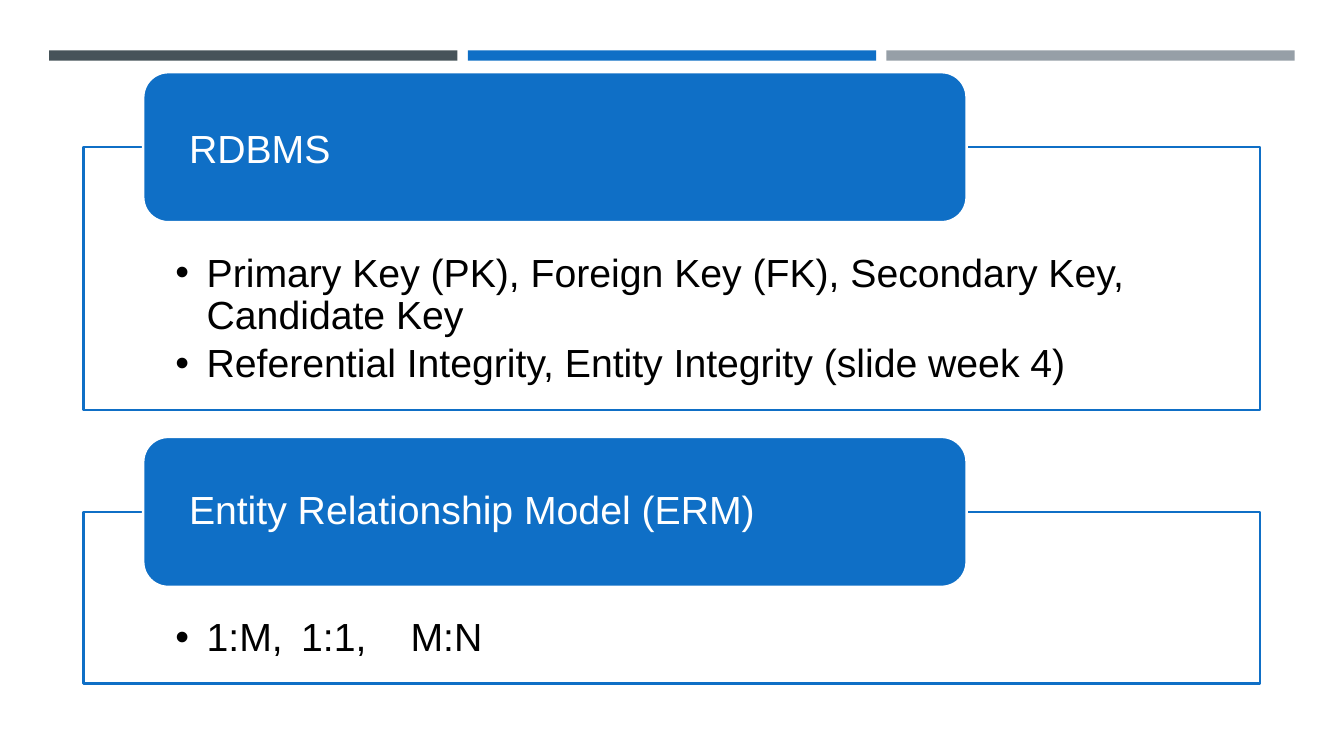
"""Build a slide with two titled boxes on relational databases and the ER model."""
from lxml import etree
from pptx import Presentation
from pptx import util as u
from pptx.dml.color import RGBColor
from pptx.enum import shapes, text
from pptx.oxml.ns import qn

BLUE, WHITE, BLACK = "0F6FC6", "FFFFFF", "000000"
BARS = ["465359", BLUE, "969FA7"]
SECTIONS = [
    {"title": "RDBMS", "title_drop": 0.2, "height": 6.63, "points": [
        "Primary Key (PK), Foreign Key (FK), Secondary Key, Candidate Key",
        "Referential Integrity, Entity Integrity (slide week 4)"]},
    {"title": "Entity Relationship Model (ERM)", "title_drop": 0, "height": 4.32,
     "points": ["1:M,\t1:1,\tM:N"]},
]
BAR_LEFT, BAR_TOP, BAR_WIDTH, BAR_HEIGHT, BAR_PITCH = 1.24, 1.27, 10.29, 0.26, 10.55
BOX_LEFT, BOX_TOP, BOX_WIDTH, BOX_GAP = 2.11, 3.71, 29.64, 2.56
TITLE_LEFT, TITLE_WIDTH, TITLE_HEIGHT = 3.61, 20.75, 3.78
BULLET_INDENT = 0.79
TAB_STOPS = [3.17, 5.93]


def color(hex_code):
    return RGBColor.from_string(hex_code)


def add_box(slide, kind, left, top, width, height, fill, line=None):
    shape = slide.shapes.add_shape(kind, u.Cm(left), u.Cm(top), u.Cm(width), u.Cm(height))
    shape.shadow.inherit = False
    shape.fill.solid()
    shape.fill.fore_color.rgb = color(fill)
    if line:
        shape.line.color.rgb = color(line)
        shape.line.width = u.Pt(1.75)
    else:
        shape.line.fill.background()
    return shape


def add_bullet(paragraph):
    properties = paragraph._p.get_or_add_pPr()
    properties.set("marL", str(u.Cm(BULLET_INDENT)))
    properties.set("indent", str(-u.Cm(BULLET_INDENT)))
    etree.SubElement(properties, qn("a:buFont"), typeface="Arial")
    etree.SubElement(properties, qn("a:buChar"), char="•")
    if "\t" in paragraph.text:
        tabs = etree.SubElement(properties, qn("a:tabLst"))
        for stop in TAB_STOPS:
            etree.SubElement(tabs, qn("a:tab"), pos=str(u.Cm(stop)), algn="l")


def write(shape, lines, *, font_color, insets, anchor, space_after, bullets=False):
    frame = shape.text_frame
    frame.word_wrap = True
    frame.vertical_anchor = anchor
    (frame.margin_left, frame.margin_top,
     frame.margin_right, frame.margin_bottom) = [u.Cm(inset) for inset in insets]
    for index, line in enumerate(lines):
        paragraph = frame.add_paragraph() if index else frame.paragraphs[0]
        paragraph.alignment = text.PP_ALIGN.LEFT
        paragraph.line_spacing = 0.9
        paragraph.space_after = u.Pt(space_after)
        run = paragraph.add_run()
        run.text = line
        run.font.name = "Arial"
        run.font.size = u.Pt(28)
        run.font.color.rgb = color(font_color)
        if bullets:
            add_bullet(paragraph)


def main():
    presentation = Presentation()
    presentation.slide_width, presentation.slide_height = u.Cm(33.87), u.Cm(19.05)
    slide = presentation.slides.add_slide(presentation.slide_layouts[6])
    kinds, anchors = shapes.MSO_SHAPE, text.MSO_ANCHOR

    for index, fill in enumerate(BARS):
        add_box(slide, kinds.RECTANGLE, BAR_LEFT + index * BAR_PITCH, BAR_TOP,
                BAR_WIDTH, BAR_HEIGHT, fill)

    top = BOX_TOP
    for section in SECTIONS:
        body = add_box(slide, kinds.RECTANGLE, BOX_LEFT, top, BOX_WIDTH,
                       section["height"], WHITE, BLUE)
        write(body, section["points"], font_color=BLACK, insets=(2.31, 2.67, 2.31, 0.56),
              anchor=anchors.TOP, space_after=4.2, bullets=True)
        title = add_box(slide, kinds.ROUNDED_RECTANGLE, TITLE_LEFT, top - TITLE_HEIGHT / 2,
                        TITLE_WIDTH, TITLE_HEIGHT, BLUE, WHITE)
        write(title, [section["title"]], font_color=WHITE,
              insets=(0.97, section["title_drop"], 0.97, 0),
              anchor=anchors.MIDDLE, space_after=0)
        top += section["height"] + BOX_GAP

    presentation.save("out.pptx")


if __name__ == "__main__":
    main()
